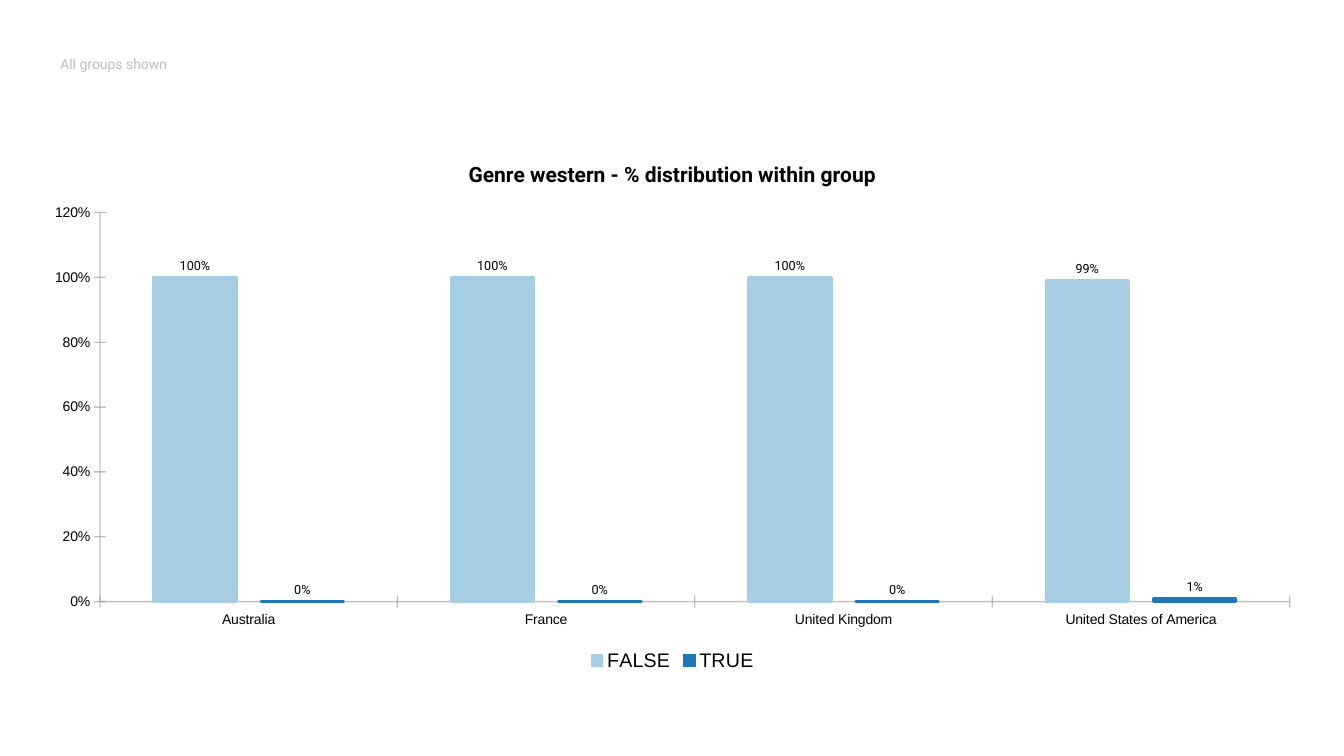
import lxml.etree
import pptx
import pptx.chart.data
import pptx.dml.color
import pptx.enum.chart
import pptx.enum.text
import pptx.oxml.ns
import pptx.util

Cm = pptx.util.Cm
Pt = pptx.util.Pt
BLACK = pptx.dml.color.RGBColor(0x00, 0x00, 0x00)
NOTE_GREY = pptx.dml.color.RGBColor(0xBE, 0xBE, 0xBE)
AXIS_GREY = pptx.dml.color.RGBColor(0x99, 0x99, 0x99)
LIGHT_BLUE = pptx.dml.color.RGBColor(0xA6, 0xCE, 0xE3)
DARK_BLUE = pptx.dml.color.RGBColor(0x1F, 0x78, 0xB4)

COUNTRIES = ["Australia", "France", "United Kingdom", "United States of America"]
WESTERN_SHARES = [
    ("FALSE", [1, 1, 1, 0.99], LIGHT_BLUE),
    ("TRUE", [0, 0, 0, 0.01], DARK_BLUE),
]


def set_attributes(target, values):
    """Set each named attribute of the target."""
    for name, value in values.items():
        setattr(target, name, value)


def format_font(font, name, size, color=BLACK, bold=False):
    """Give a font its face, size, weight and colour."""
    set_attributes(font, {"name": name, "size": Pt(size), "bold": bold})
    font.color.rgb = color


def format_axis(axis, values):
    """Style an axis with a translucent grey line and crossing ticks."""
    set_attributes(axis, {
        "has_major_gridlines": False,
        "major_tick_mark": pptx.enum.chart.XL_TICK_MARK.CROSS,
        "minor_tick_mark": pptx.enum.chart.XL_TICK_MARK.NONE,
        **values,
    })
    format_font(axis.tick_labels.font, "Arial", 10)
    line = axis.format.line
    line.width = Pt(1)
    line.color.rgb = AXIS_GREY
    color = axis._element.find(".//" + pptx.oxml.ns.qn("a:ln")).find(
        ".//" + pptx.oxml.ns.qn("a:srgbClr"))
    lxml.etree.SubElement(color, pptx.oxml.ns.qn("a:alpha"), val="60000")


def format_series(series, color):
    """Colour a series and show its values above the columns."""
    series.format.fill.solid()
    series.format.fill.fore_color.rgb = color
    series.format.line.color.rgb = color
    series.format.line.width = Pt(2)
    labels = series.data_labels
    set_attributes(labels, {
        "show_value": True,
        "number_format": "0%",
        "number_format_is_linked": False,
        "position": pptx.enum.chart.XL_LABEL_POSITION.OUTSIDE_END,
    })
    format_font(labels.font, "Roboto", 9)


def add_group_note(slide, left, top, width, height):
    """Add the note on which groups are shown."""
    frame = slide.shapes.add_textbox(left, top, width, height).text_frame
    frame.word_wrap = True
    frame.vertical_anchor = pptx.enum.text.MSO_ANCHOR.TOP
    run = frame.paragraphs[0].add_run()
    run.text = "All groups shown"
    format_font(run.font, "Roboto", 10, NOTE_GREY)


def add_distribution_chart(slide, left, top, width, height):
    """Add the column chart of western shares by country."""
    data = pptx.chart.data.CategoryChartData(number_format="0%")
    data.categories = COUNTRIES
    for name, shares, _ in WESTERN_SHARES:
        data.add_series(name, shares)
    chart = slide.shapes.add_chart(
        pptx.enum.chart.XL_CHART_TYPE.COLUMN_CLUSTERED,
        left, top, width, height, data).chart
    format_font(chart.font, "Roboto", 18)

    title = chart.chart_title.text_frame.paragraphs[0].add_run()
    title.text = "Genre western - % distribution within group"
    format_font(title.font, "Roboto", 15, bold=True)

    chart.has_legend = True
    set_attributes(chart.legend, {
        "position": pptx.enum.chart.XL_LEGEND_POSITION.BOTTOM,
        "include_in_layout": False,
    })
    format_font(chart.legend.font, "Arial", 14)

    format_axis(chart.category_axis, {})
    format_axis(chart.value_axis, {"minimum_scale": 0})
    set_attributes(chart.value_axis.tick_labels, {
        "number_format": "0%", "number_format_is_linked": False})

    plot = chart.plots[0]
    set_attributes(plot, {"gap_width": 130, "overlap": -30, "vary_by_categories": False})
    for series, (_, _, color) in zip(plot.series, WESTERN_SHARES):
        format_series(series, color)


def main():
    """Build and save the presentation."""
    presentation = pptx.Presentation()
    set_attributes(presentation, {"slide_width": Cm(33.87), "slide_height": Cm(19.05)})
    slide = presentation.slides.add_slide(presentation.slide_layouts[6])
    add_distribution_chart(slide, Cm(0.74), Cm(3.53), Cm(32.41), Cm(13.49))
    add_group_note(slide, Cm(1.27), Cm(1.27), Cm(15.24), Cm(2.54))
    presentation.save("out.pptx")


if __name__ == "__main__":
    main()
